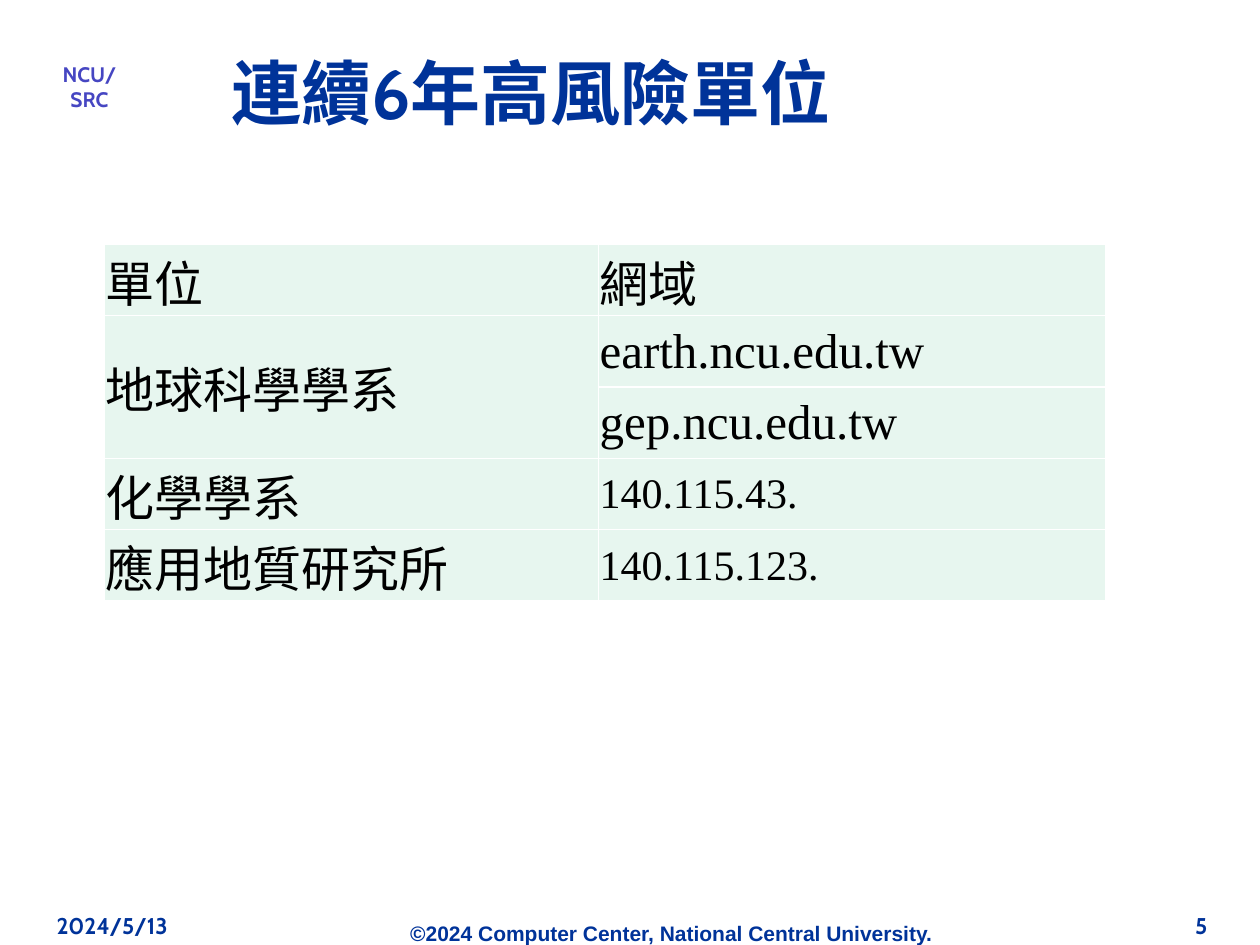
from dataclasses import dataclass

from lxml.etree import SubElement
from pptx import Presentation
from pptx.dml.color import RGBColor
from pptx.enum.text import MSO_ANCHOR, PP_ALIGN
from pptx.oxml import parse_xml
from pptx.oxml.ns import nsdecls, qn
from pptx.util import Emu, Inches, Pt


@dataclass(frozen=True)
class Theme:
    """Colours, fonts and type sizes of the slide."""

    navy: str = "003399"
    violet: str = "4646C2"
    outline: str = "000080"
    ink: str = "000000"
    mint: str = "E7F6EF"
    white: str = "FFFFFF"
    display: str = "Cabin"
    sans: str = "Arial"
    serif: str = "Times New Roman"
    title: int = 40
    unit: int = 28
    address: int = 24
    footer: int = 13
    small: int = 12


THEME = Theme()
WIDTH, HEIGHT = Inches(10), Inches(7.5)
UNITS = [
    ("單位", ["網域"]),
    ("地球科學學系", ["earth.ncu.edu.tw", "gep.ncu.edu.tw"]),
    ("化學學系", ["140.115.43."]),
    ("應用地質研究所", ["140.115.123."]),
]


def across(percent):
    """Return a share of the slide's width."""
    return Emu(round(WIDTH * percent / 100))


def down(percent):
    """Return a share of the slide's height."""
    return Emu(round(HEIGHT * percent / 100))


def style_span(span, font, size, color, bold=False):
    """Set the face, size, colour and weight of a run."""
    span.font.name = font
    span.font.size = Pt(size)
    span.font.color.rgb = RGBColor.from_string(color)
    span.font.bold = bold


def add_label(page, text, place, size, font=THEME.display, color=THEME.navy,
              align=PP_ALIGN.LEFT, anchor=MSO_ANCHOR.TOP, side=0.1, wrap=True):
    """Add a one-line bold text box and return its run."""
    left, top, width, height = place
    box = page.shapes.add_textbox(across(left), down(top), across(width), down(height))
    frame = box.text_frame
    frame.word_wrap = wrap
    frame.vertical_anchor = anchor
    frame.margin_left = frame.margin_right = Inches(side)
    frame.margin_top = frame.margin_bottom = Inches(0.05)
    frame.text = text
    paragraph = frame.paragraphs[0]
    paragraph.alignment = align
    span = paragraph.runs[0]
    style_span(span, font, size, color, bold=True)
    return span


def outline_span(span, color, points):
    """Give the letters of a run an outline."""
    line = parse_xml(f'<a:ln {nsdecls("a")} w="{Pt(points)}"><a:solidFill>'
                     f'<a:srgbClr val="{color}"/></a:solidFill></a:ln>')
    span.font._element.insert(0, line)


def format_cell(cell):
    """Give a cell its borders, fill, margins and anchor."""
    properties = cell._tc.get_or_add_tcPr()
    for side in ("lnL", "lnR", "lnT", "lnB"):
        line = SubElement(properties, qn(f"a:{side}"), w=str(Pt(1)))
        fill = SubElement(line, qn("a:solidFill"))
        SubElement(fill, qn("a:srgbClr"), val=THEME.white)
    cell.fill.solid()
    cell.fill.fore_color.rgb = RGBColor.from_string(THEME.mint)
    cell.margin_left = cell.margin_right = cell.margin_top = Inches(0.01)
    cell.margin_bottom = 0
    cell.vertical_anchor = MSO_ANCHOR.MIDDLE


def write_cell(cell, text):
    """Write a cell in the face and size that suit its content."""
    cell.text = text
    font = THEME.serif if text.isascii() else THEME.sans
    size = THEME.address if text[0].isdigit() else THEME.unit
    style_span(cell.text_frame.paragraphs[0].runs[0], font, size, THEME.ink)


def add_unit_table(page):
    """Add the table of units, merging a unit over its domains."""
    count = sum(len(domains) for _, domains in UNITS)
    widths = (39.2, 40.3)
    table = page.shapes.add_table(count, len(widths), across(8.3), down(25.87),
                                  across(sum(widths)), down(37.73)).table
    table.first_row = table.horz_banding = False
    for column, width in zip(table.columns, widths):
        column.width = across(width)
    for cell in table.iter_cells():
        format_cell(cell)
    row = 0
    for unit, domains in UNITS:
        last = row + len(domains) - 1
        if last > row:
            table.cell(row, 0).merge(table.cell(last, 0))
        write_cell(table.cell(row, 0), unit)
        for offset, domain in enumerate(domains):
            write_cell(table.cell(row + offset, 1), domain)
        row = last + 1


def main():
    """Build the slide and save the deck."""
    deck = Presentation()
    deck.slide_width, deck.slide_height = WIDTH, HEIGHT
    page = deck.slides.add_slide(deck.slide_layouts[6])
    add_label(page, "©2024 Computer Center, National Central University.",
              (17.2, 96.8, 72.2, 4), THEME.small, font=THEME.sans,
              align=PP_ALIGN.CENTER)
    tag = add_label(page, "NCU/SRC", (3.5, 5.87, 7.2, 3.2), THEME.small,
                    color=THEME.violet, align=PP_ALIGN.CENTER, side=0, wrap=False)
    outline_span(tag, THEME.outline, 0.75)
    add_label(page, "連續6年高風險單位", (17.4, 3.73, 82.6, 12), THEME.title,
              anchor=MSO_ANCHOR.MIDDLE)
    add_label(page, "2024/5/13", (3.5, 95.87, 20.8, 6.67), THEME.footer)
    add_label(page, "5", (76, 95.87, 20.8, 6.67), THEME.footer, align=PP_ALIGN.RIGHT)
    add_unit_table(page)
    deck.save("out.pptx")


if __name__ == "__main__":
    main()
